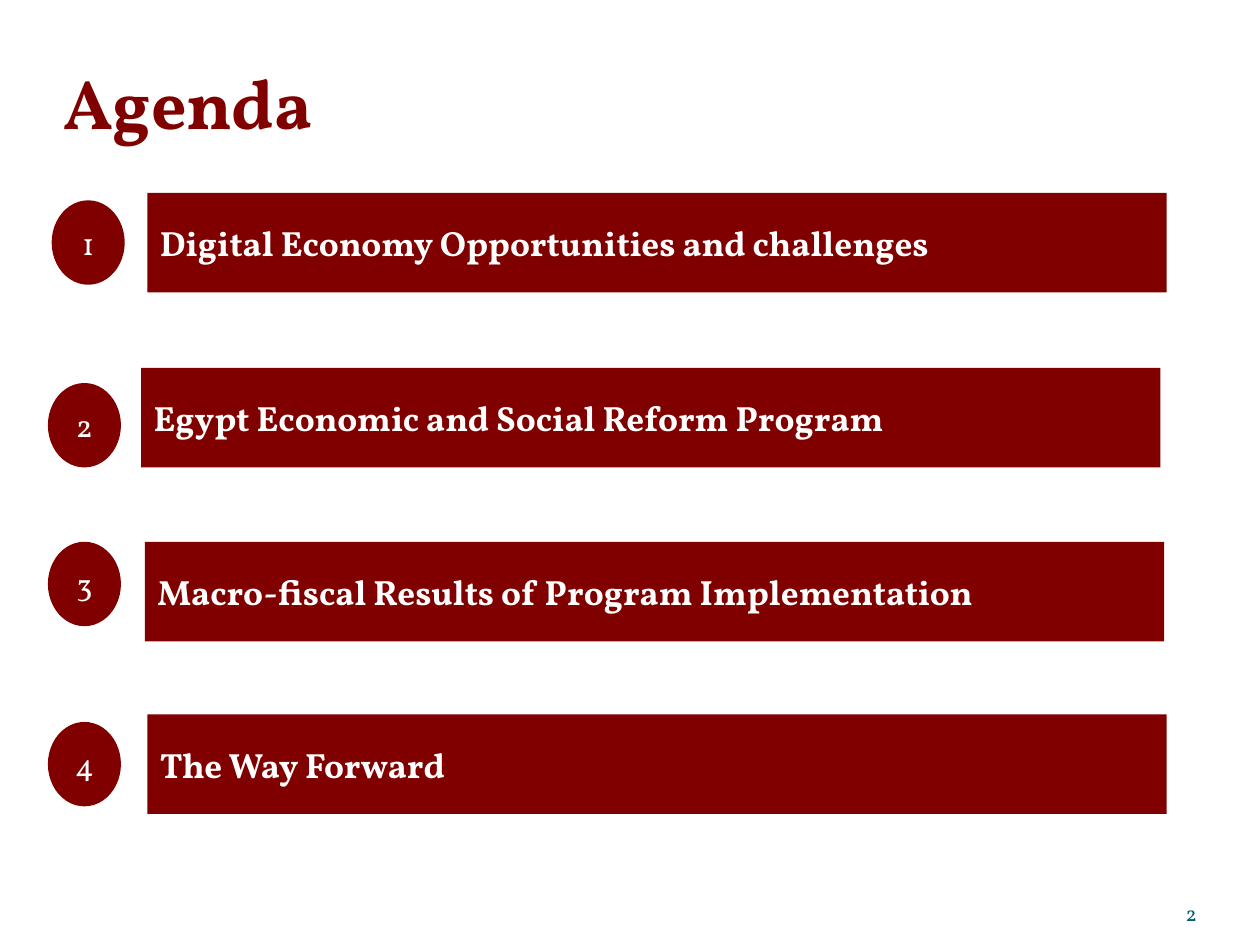
from pptx import Presentation
from pptx.dml.color import RGBColor
from pptx.enum.shapes import MSO_SHAPE
from pptx.enum.text import MSO_ANCHOR, PP_ALIGN
from pptx.util import Inches, Pt

RECT, OVAL = MSO_SHAPE.RECTANGLE, MSO_SHAPE.OVAL
MIDDLE, BOTTOM = MSO_ANCHOR.MIDDLE, MSO_ANCHOR.BOTTOM
LEFT, CENTER, RIGHT = PP_ALIGN.LEFT, PP_ALIGN.CENTER, PP_ALIGN.RIGHT

MAROON = RGBColor(0x80, 0x00, 0x00)
TEAL = RGBColor(0x04, 0x5D, 0x75)
WHITE = RGBColor(0xFF, 0xFF, 0xFF)
FONT = "Vollkorn"

COLS, ROWS = 100, 75
WIDTH, HEIGHT = Inches(10), Inches(7.5)
BAR_H = 7.9
DISC_W, DISC_H = 5.8, 6.7

ITEMS = [
    ("Digital Economy Opportunities and challenges", 15.3, 11.7, 4.1, 0.6),
    ("Egypt Economic and Social Reform Program", 29.2, 11.2, 3.8, 1.2),
    ("Macro-fiscal Results of Program Implementation", 43, 11.5, 3.8, 0),
    ("The Way Forward", 56.7, 11.7, 3.8, 0.6),
]


def place(box):
    x, y, w, h = box
    return (round(x * WIDTH / COLS), round(y * HEIGHT / ROWS),
            round(w * WIDTH / COLS), round(h * HEIGHT / ROWS))


def write(shape, text, size, color, align, anchor, bold=False):
    frame = shape.text_frame
    frame.word_wrap = True
    frame.vertical_anchor = anchor
    par = frame.paragraphs[0]
    par.text = text
    par.alignment = align
    font = par.font
    font.name, font.size, font.bold = FONT, Pt(size), bold
    font.color.rgb = color


def add_block(slide, kind, box, text, size, align, bold=False):
    shape = slide.shapes.add_shape(kind, *place(box))
    shape.shadow.inherit = False
    shape.fill.solid()
    shape.fill.fore_color.rgb = MAROON
    shape.line.fill.background()
    write(shape, text, size, WHITE, align, MIDDLE, bold)


def add_label(slide, box, text, size, color, align, bold=False, top=0):
    shape = slide.shapes.add_textbox(*place(box))
    frame = shape.text_frame
    frame.margin_left = frame.margin_right = frame.margin_bottom = 0
    frame.margin_top = Inches(top)
    write(shape, text, size, color, align, BOTTOM, bold)


def add_item(slide, box, number, text, disc_x, drop):
    x, y, w, h = box
    add_block(slide, RECT, box, text, 20, LEFT, True)
    disc = (disc_x, y + drop, DISC_W, DISC_H)
    add_block(slide, OVAL, disc, str(number), 18, CENTER)


def add_agenda(slide):
    add_label(slide, (5, 2.1, 90.8, 9.3), "Agenda", 40, MAROON, LEFT, True, 0.05)
    for number, (text, y, x, disc_x, drop) in enumerate(ITEMS, 1):
        add_item(slide, (x, y, 80.9, BAR_H), number, text, disc_x, drop)
    add_label(slide, (86.7, 69.5, 8.3, 4), "2", 12, TEAL, RIGHT)


def main():
    deck = Presentation()
    deck.slide_width, deck.slide_height = WIDTH, HEIGHT
    add_agenda(deck.slides.add_slide(deck.slide_layouts[6]))
    deck.save("out.pptx")


if __name__ == "__main__":
    main()
